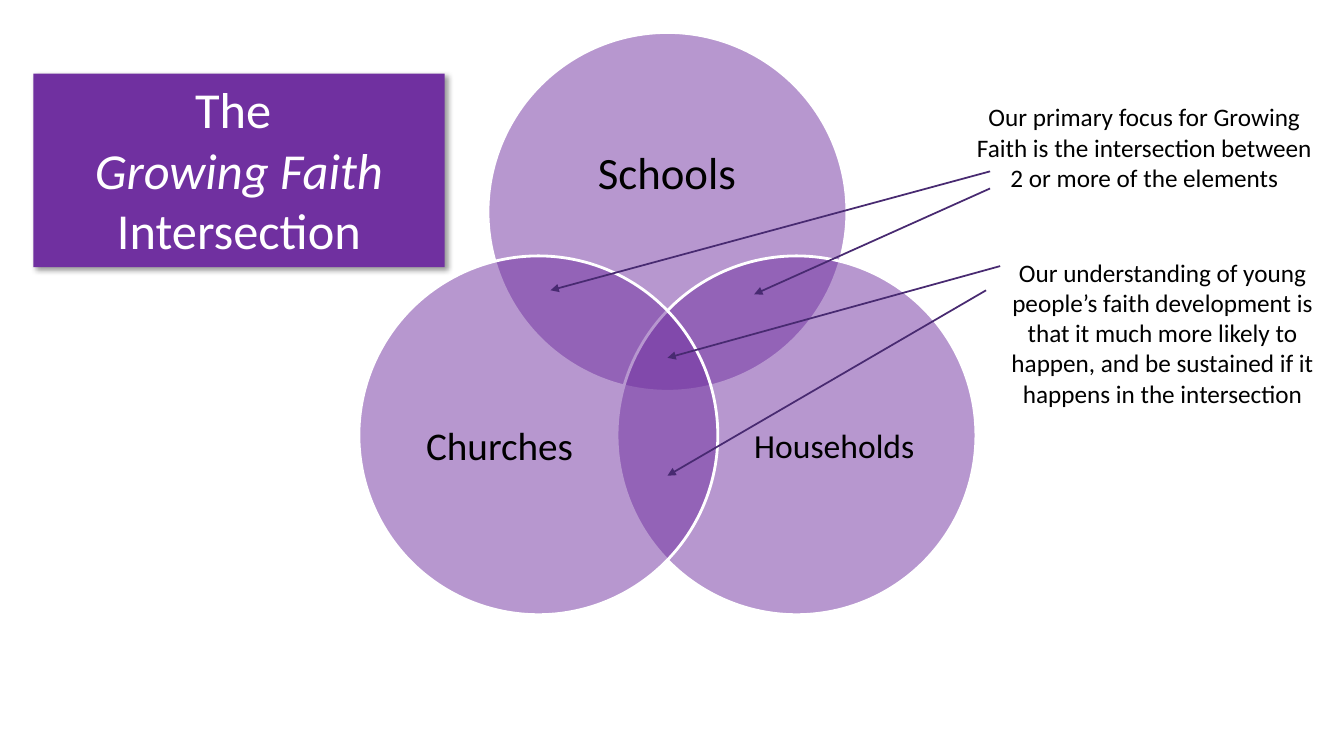
from dataclasses import dataclass
from math import cos, radians, sin

from lxml.etree import SubElement
from pptx import Presentation
from pptx.dml.color import RGBColor
from pptx.enum.shapes import MSO_CONNECTOR, MSO_SHAPE as Preset
from pptx.enum.text import MSO_ANCHOR as Anchor, PP_ALIGN as Align
from pptx.oxml.ns import qn
from pptx.util import Emu, Inches, Pt

# Square grid: 133.3 columns by 75 rows
CELL = Inches(0.1)
COLUMNS, ROWS = 133.3, 75
FONT = "Calibri"
PURPLE, DARK_PURPLE, WHITE, BLACK = "7030A0", "482A71", "FFFFFF", "000000"

# The circle centres form an equilateral triangle
DIAMETER = 35.6
CENTRE_COLUMN, CENTRE_ROW = 66.2, 35.8
CENTRE_DISTANCE = 14.78


@dataclass
class Area:
    column: float
    row: float
    width: float
    height: float


@dataclass
class Circle:
    name: str
    angle: float
    size: int
    label: Area


@dataclass
class Note:
    text: str
    area: Area


@dataclass
class Arrow:
    start: tuple[float, float]
    end: tuple[float, float]


CIRCLES = [
    Circle("Schools", -90, 32, Area(53.1, 9.4, 26.1, 16)),
    Circle("Households", 30, 24, Area(72.1, 34.6, 21.3, 19.6)),
    Circle("Churches", 150, 28, Area(38.9, 34.6, 21.3, 19.6)),
]
NOTES = [
    Note("Our primary focus for Growing Faith is the intersection between "
         "2 or more of the elements", Area(95.2, 9.6, 36.6, 10.1)),
    Note("Our understanding of young people’s faith development is that it "
         "much more likely to happen, and be sustained if it happens in the "
         "intersection", Area(98.7, 25, 33.2, 16.2)),
]
ARROWS = [
    Arrow((98.2, 17), (54.6, 28.8)),
    Arrow((97.8, 28.8), (66.2, 47.2)),
    Arrow((98.2, 18.7), (74.8, 29.2)),
    Arrow((99.2, 26.4), (66.2, 35.5)),
]


def cells(count: float) -> Emu:
    return Emu(round(count * CELL))


def place(area: Area) -> list[Emu]:
    return [cells(n) for n in (area.column, area.row, area.width, area.height)]


def paint(color_format, color: str) -> None:
    color_format.rgb = RGBColor.from_string(color)


def style(span, size: int, color: str, italic: bool = False) -> None:
    span.font.name, span.font.size = FONT, Pt(size)
    span.font.italic = italic
    paint(span.font.color, color)


def fill(shape, color: str) -> None:
    shape.shadow.inherit = False
    shape.fill.solid()
    paint(shape.fill.fore_color, color)


def add_text(shapes, text: str, area: Area, size: int):
    box = shapes.add_textbox(*place(area))
    frame = box.text_frame
    frame.word_wrap = True
    frame.text = text
    para = frame.paragraphs[0]
    para.alignment = Align.CENTER
    style(para.runs[0], size, BLACK)
    return frame


def add_circle(shapes, circle: Circle) -> None:
    angle = radians(circle.angle)
    left = CENTRE_COLUMN + CENTRE_DISTANCE * cos(angle) - DIAMETER / 2
    top = CENTRE_ROW + CENTRE_DISTANCE * sin(angle) - DIAMETER / 2
    disc = shapes.add_shape(Preset.OVAL, *place(Area(left, top, DIAMETER, DIAMETER)))
    fill(disc, PURPLE)
    tint = disc.fill._xPr.find(qn("a:solidFill"))[0]
    SubElement(tint, qn("a:alpha"), val="50000")
    paint(disc.line.color, WHITE)
    disc.line.width = Pt(2)
    frame = add_text(shapes, circle.name, circle.label, circle.size)
    frame.margin_left = frame.margin_right = frame.margin_top = frame.margin_bottom = 0
    frame.vertical_anchor = Anchor.MIDDLE
    frame.paragraphs[0].line_spacing = 0.9


def add_arrow(shapes, arrow: Arrow) -> None:
    points = [cells(n) for n in arrow.start + arrow.end]
    line = shapes.add_connector(MSO_CONNECTOR.STRAIGHT, *points)
    paint(line.line.color, DARK_PURPLE)
    line.line.width = Pt(1.25)
    SubElement(line.line._get_or_add_ln(), qn("a:tailEnd"), type="triangle")
    SubElement(line._element.spPr, qn("a:effectLst"))


def add_title(shapes) -> None:
    box = shapes.add_shape(Preset.RECTANGLE, *place(Area(3.3, 7.3, 40.8, 19.2)))
    fill(box, PURPLE)
    box.line.fill.background()
    # Soft shadow towards the lower right
    effects = box._element.spPr.find(qn("a:effectLst"))
    shadow = SubElement(effects, qn("a:outerShdw"), blurRad=str(Pt(4)),
                        dist=str(Pt(3)), dir=str(45 * 60000), algn="tl", rotWithShape="0")
    tint = SubElement(shadow, qn("a:srgbClr"), val=BLACK)
    SubElement(tint, qn("a:alpha"), val="40000")
    frame = box.text_frame
    frame.word_wrap = True
    frame.vertical_anchor = Anchor.TOP
    frame.text = "The \nGrowing Faith"
    frame.paragraphs[1].add_run().text = " Intersection"
    for para in frame.paragraphs:
        para.alignment = Align.CENTER
        for span in para.runs:
            style(span, 36, WHITE, italic=span.text == "Growing Faith")


def main() -> None:
    deck = Presentation()
    deck.slide_width, deck.slide_height = cells(COLUMNS), cells(ROWS)
    page = deck.slides.add_slide(deck.slide_layouts[6])

    # Venn diagram
    venn = page.shapes.add_group_shape()
    for circle in CIRCLES:
        add_circle(venn.shapes, circle)

    # Notes and their arrows
    for note in NOTES:
        add_text(page.shapes, note.text, note.area, 18)
    for arrow in ARROWS:
        add_arrow(page.shapes, arrow)

    add_title(page.shapes)
    deck.save("out.pptx")


if __name__ == "__main__":
    main()
